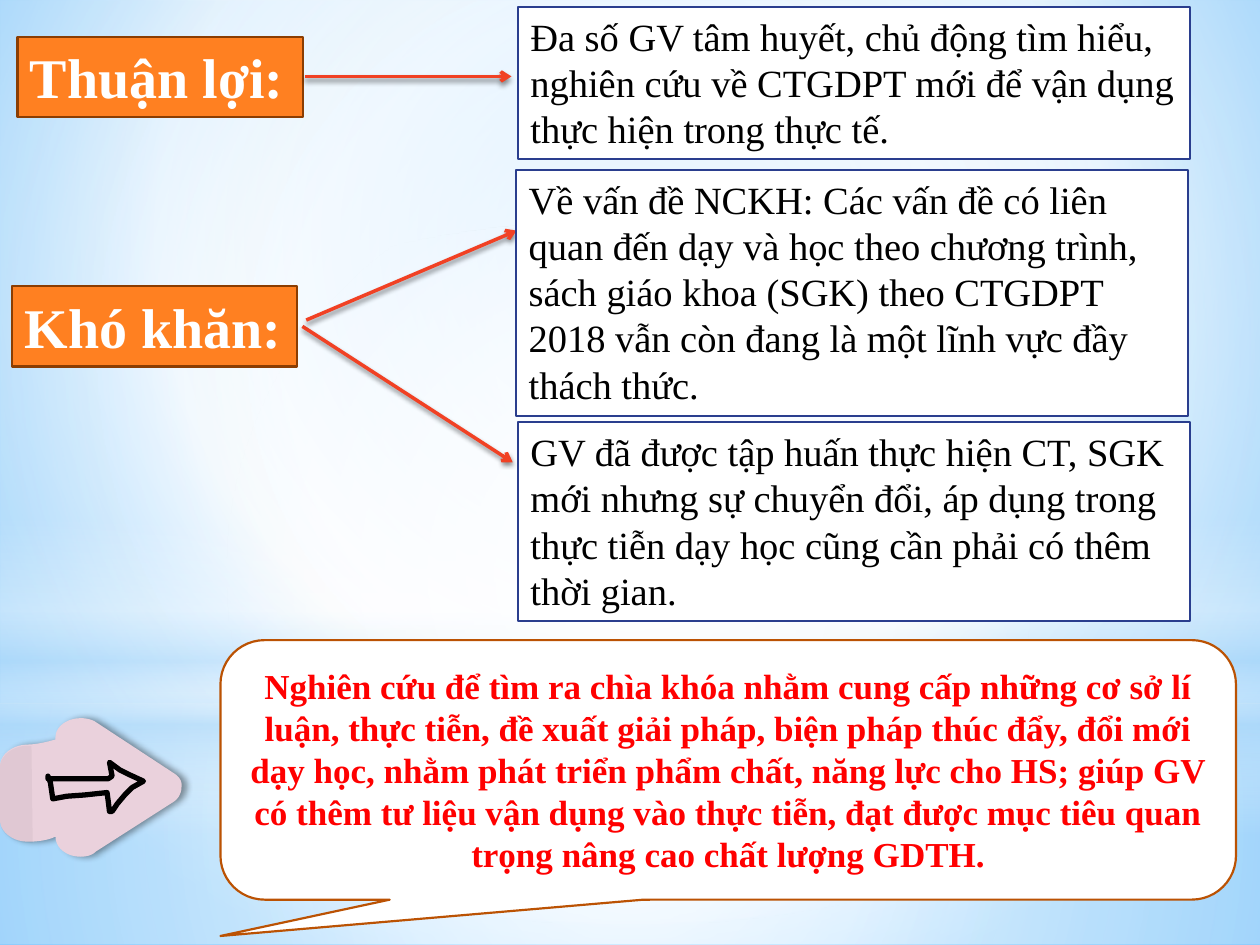
from lxml import etree
from pptx import Presentation
from pptx.dml.color import RGBColor
from pptx.enum.shapes import MSO_CONNECTOR, MSO_SHAPE
from pptx.enum.text import MSO_ANCHOR, MSO_AUTO_SIZE, PP_ALIGN
from pptx.oxml.ns import qn
from pptx.util import Pt

FONT = "Times New Roman"
WHITE = RGBColor(0xFF, 0xFF, 0xFF)
BLACK = RGBColor(0, 0, 0)
RED = RGBColor(0xFF, 0, 0)
ORANGE = RGBColor(0xFF, 0x80, 0x21)
BROWN = RGBColor(0x8B, 0x3D, 0x02)
NAVY = RGBColor(0x2A, 0x3E, 0x8E)
ARROW_RED = RGBColor(0xF1, 0x41, 0x24)
RUST = RGBColor(0xBB, 0x52, 0x03)
PINK = RGBColor(0xEA, 0xD1, 0xDC)
PALE_BLUE = RGBColor(0xB4, 0xDC, 0xFA)
SKY = RGBColor(0x9E, 0xD5, 0xFF)
DEEP_SKY = RGBColor(0x5B, 0xB9, 0xFF)
CENTER = (50, 50, 50, 50)

LABELS = [
    ("Thuận lợi:", (10, 21, 163, 46)),
    ("Khó khăn:", (7, 163.5, 163, 46)),
]
DETAILS = [
    ("Đa số GV tâm huyết, chủ động tìm hiểu, nghiên cứu về CTGDPT mới để vận dụng "
     "thực hiện trong thực tế.", (296, 3.8, 384, 87.2)),
    ("Về vấn đề NCKH: Các vấn đề có liên quan đến dạy và học theo chương trình, sách "
     "giáo khoa (SGK) theo CTGDPT 2018 vẫn còn đang là một lĩnh vực đầy thách thức.",
     (295, 97, 384, 140.5)),
    ("GV đã được tập huấn thực hiện CT, SGK mới nhưng sự chuyển đổi, áp dụng trong "
     "thực tiễn dạy học cũng cần phải có thêm thời gian.", (296, 241.2, 384, 113.8)),
]
ARROWS = [(174.2, 43.7, 292.3, 43.7), (172.8, 186.5, 293, 264.2), (175, 182.9, 295.2, 131.8)]
CONCLUSION = (
    "Nghiên cứu để tìm ra chìa khóa nhằm cung cấp những cơ sở lí luận, thực tiễn, đề xuất "
    "giải pháp, biện pháp thúc đẩy, đổi mới dạy học, nhằm phát triển phẩm chất, năng lực "
    "cho HS; giúp GV có thêm tư liệu vận dụng vào thực tiễn, đạt được mục tiêu quan trọng "
    "nâng cao chất lượng GDTH.")

# Outlines relative to the pointer's box: a single pair is a line, three pairs a curve.
POINTER = [
    (46, 0), (49, 0, 52.5, 0.7, 54.7, 2.2), (98.6, 31),
    (102.2, 33.1, 104.4, 36, 103.7, 39.6), (103.7, 42.5, 102.2, 46.1, 98.6, 48.2),
    (54.7, 76.3), (52.5, 78.5, 49, 79.2, 46, 79.2), (38.2, 79.2, 31.7, 74.2, 31.7, 67.7),
    (25.9, 70.6, 17.3, 70.6, 17.3, 70.6), (15.8, 70.6), (7.2, 70.6, 0, 64.8, 0, 58.3),
    (0, 27.4), (0, 20.9, 7.2, 15.1, 15.8, 15.1), (22.3, 15.1, 31.7, 12.2, 31.7, 12.2),
    (31.7, 10.8), (31.7, 5, 38.2, 0, 46, 0),
]
POINTER_SHADE = [
    (18, 15.8), (15.8, 15.8), (7.2, 15.8, 0, 21.6, 0, 28.1), (0, 59),
    (0, 65.5, 7.2, 71.3, 15.8, 71.3), (18.7, 71.3),
]
SKETCHED_ARROW = [
    (27.4, 33.1), (28.8, 36.7), (30.2, 46.1), (38.2, 44.6), (48.2, 43.9), (61.2, 42.5),
    (61.9, 47.5), (62.6, 53.3), (64.1, 53.3), (67, 49), (71.3, 43.9), (75.6, 39.6),
    (82, 36), (74.2, 32.4), (68.4, 29.5), (62.6, 25.2), (64.1, 33.1), (61.9, 34.6),
    (52.6, 34.6), (36, 34.6), (27.4, 34.6),
]


def pts(*values):
    return [Pt(v) for v in values]


def add(parent, tag, **attrs):
    return etree.SubElement(parent, qn(tag), {k: str(v) for k, v in attrs.items()})


def add_color(parent, color, opacity=100):
    clr = add(parent, "a:srgbClr", val=color)
    if opacity < 100:
        add(clr, "a:alpha", val=opacity * 1000)


def set_gradient(fill, holder, stops, focus=None):
    """Stops are (position, colour, opacity); without a focus the gradient runs downwards."""
    fill.gradient()
    grad = next(holder.iter(qn("a:gradFill")))
    for child in list(grad):
        grad.remove(child)
    gs_list = add(grad, "a:gsLst")
    for pos, color, opacity in stops:
        add_color(add(gs_list, "a:gs", pos=pos * 1000), color, opacity)
    if focus:
        circle = add(grad, "a:path", path="circle")
        add(circle, "a:fillToRect", **{k: v * 1000 for k, v in zip("ltrb", focus)})
    else:
        add(grad, "a:lin", ang=5400000, scaled=0)


def set_shadow(sp, opacity, blur, dist, angle):
    effects = add(sp._element.spPr, "a:effectLst")
    shadow = add(effects, "a:outerShdw", blurRad=Pt(blur), dist=Pt(dist),
                 dir=angle * 60000, algn="ctr", rotWithShape=0)
    add_color(shadow, BLACK, opacity)


def style_box(sp, fill, line):
    sp.fill.solid()
    sp.fill.fore_color.rgb = fill
    sp.line.color.rgb = line
    sp.line.width = Pt(1.25)


def add_run(p, text, size, color, bold=False):
    r = p.add_run()
    r.text = text
    r.font.name, r.font.size, r.font.bold = FONT, Pt(size), bold
    r.font.color.rgb = color


def draw_background(s):
    set_gradient(s.background.fill, s._element,
                 [(0, SKY, 100), (60, WHITE, 100), (100, DEEP_SKY, 100)], (20, 10, 20, 60))
    rect, oval = MSO_SHAPE.RECTANGLE, MSO_SHAPE.OVAL
    layers = [
        (rect, 402, 138, [(0, WHITE, 91), (37, WHITE, 76), (100, PALE_BLUE, 79)], CENTER),
        (rect, 0, 402, [(0, WHITE, 89), (48, WHITE, 62), (100, PALE_BLUE, 79)], CENTER),
        (rect, 296.6, 180, [(0, WHITE, 0), (29, WHITE, 30), (45, PALE_BLUE, 40),
                            (55, WHITE, 26), (65, PALE_BLUE, 60), (100, WHITE, 0)], None),
        (oval, 126, 402, [(0, WHITE, 100), (56, WHITE, 0)], CENTER),
    ]
    for kind, top, height, stops, focus in layers:
        sp = s.shapes.add_shape(kind, *pts(0, top, 720, height))
        sp.shadow.inherit = False
        sp.line.fill.background()
        set_gradient(sp.fill, sp._element, stops, focus)


def draw_text_box(s, box, text, size, color, fill, line, bold=False):
    sp = s.shapes.add_textbox(*pts(*box))
    style_box(sp, fill, line)
    tf = sp.text_frame
    tf.word_wrap = True
    tf.auto_size = MSO_AUTO_SIZE.SHAPE_TO_FIT_TEXT
    add_run(tf.paragraphs[0], text, size, color, bold)


def draw_arrow(s, ends):
    line = s.shapes.add_connector(MSO_CONNECTOR.STRAIGHT, *pts(*ends))
    line.line.color.rgb = ARROW_RED
    line.line.width = Pt(2)
    add(line.line._get_or_add_ln(), "a:tailEnd", type="arrow")
    set_shadow(line, 45, 3.1, 1.8, 90)


def flatten(outline, steps=10):
    """Turn lines and Bézier curves into a list of points."""
    points = [outline[0]]
    for seg in outline[1:]:
        if len(seg) == 2:
            points.append(seg)
            continue
        x0, y0 = points[-1]
        x1, y1, x2, y2, x3, y3 = seg
        for i in range(1, steps + 1):
            t = i / steps
            a, b, c, d = (1 - t) ** 3, 3 * t * (1 - t) ** 2, 3 * t * t * (1 - t), t ** 3
            points.append((a * x0 + b * x1 + c * x2 + d * x3,
                           a * y0 + b * y1 + c * y2 + d * y3))
    return points


def draw_outline(shapes, left, top, outline):
    points = [(x * 100, y * 100) for x, y in flatten(outline)]
    builder = shapes.build_freeform(*points[0], scale=Pt(1) / 100)
    builder.add_line_segments(points[1:], close=True)
    sp = builder.convert_to_shape(*pts(left, top))
    sp.fill.background()
    sp.line.fill.background()
    return sp


def draw_pointer(s, left, top):
    shapes = s.shapes.add_group_shape().shapes
    body = draw_outline(shapes, left, top, POINTER)
    body.fill.solid()
    body.fill.fore_color.rgb = PINK
    set_shadow(body, 40, 4, 3, 0)
    shade = draw_outline(shapes, left, top, POINTER_SHADE)
    shade.shadow.inherit = False
    shade.fill.solid()
    shade.fill.fore_color.rgb = BLACK
    add(next(shade._element.iter(qn("a:srgbClr"))), "a:alpha", val=4000)
    arrow = draw_outline(shapes, left, top, SKETCHED_ARROW)
    arrow.shadow.inherit = False
    arrow.line.color.rgb = BLACK
    arrow.line.width = Pt(3)


def draw_callout(s, box):
    sp = s.shapes.add_shape(MSO_SHAPE.ROUNDED_RECTANGULAR_CALLOUT, *pts(*box))
    sp.shadow.inherit = False
    for i, value in enumerate((-0.5, 0.64, 0.17)):
        sp.adjustments[i] = value
    style_box(sp, WHITE, RUST)
    tf = sp.text_frame
    tf.word_wrap = True
    tf.vertical_anchor = MSO_ANCHOR.MIDDLE
    p = tf.paragraphs[0]
    p.alignment = PP_ALIGN.CENTER
    add_run(p, CONCLUSION, 20, RED, bold=True)


def main():
    prs = Presentation()
    prs.slide_width, prs.slide_height = pts(720, 540)
    s = prs.slides.add_slide(prs.slide_layouts[6])
    draw_background(s)
    for text, box in LABELS:
        draw_text_box(s, box, text, 32, WHITE, ORANGE, BROWN, bold=True)
    for ends in ARROWS:
        draw_arrow(s, ends)
    for text, box in DETAILS:
        draw_text_box(s, box, text, 22, BLACK, WHITE, NAVY)
    draw_pointer(s, 0, 410.4)
    draw_callout(s, (126, 365.8, 580.3, 148.3))
    prs.save("out.pptx")


if __name__ == "__main__":
    main()
